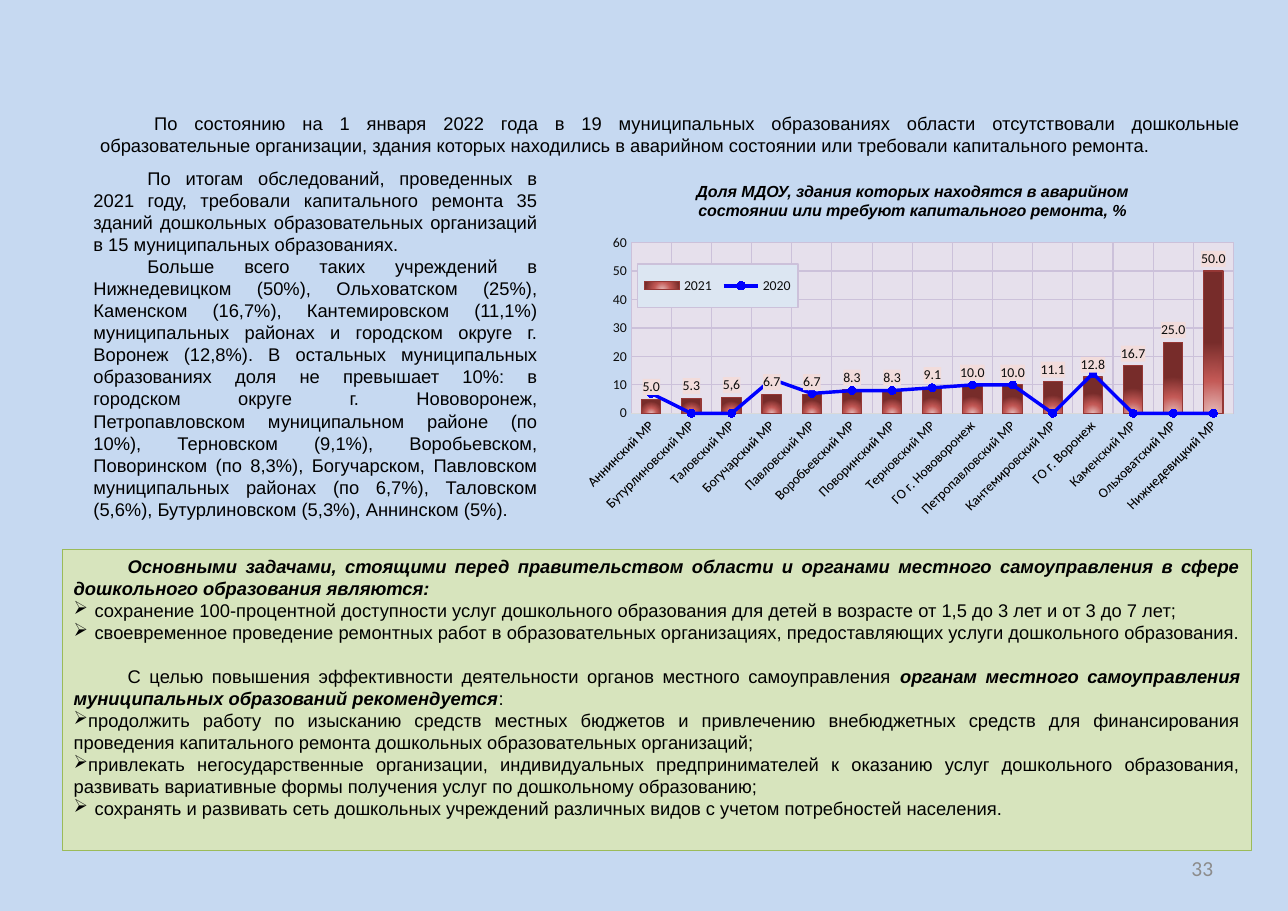
from pptx import Presentation
from pptx.chart.data import CategoryChartData
from pptx.dml.color import RGBColor
from pptx.enum.chart import XL_CHART_TYPE, XL_LABEL_POSITION, XL_LEGEND_POSITION, XL_MARKER_STYLE, XL_TICK_MARK
from pptx.enum.shapes import MSO_SHAPE
from pptx.enum.text import MSO_ANCHOR, PP_ALIGN
from pptx.oxml import parse_xml
from pptx.oxml.ns import nsdecls, qn
from pptx.util import Pt

SKY = RGBColor(0xC6, 0xD9, 0xF1)
BLACK = RGBColor(0, 0, 0)
INK = RGBColor(0x0D, 0x0D, 0x0D)
GREY = RGBColor(0x8C, 0x8C, 0x8C)
PALE_GREEN = RGBColor(0xD7, 0xE4, 0xBD)
GREEN = RGBColor(0x9B, 0xBB, 0x59)
LILAC = RGBColor(0xCC, 0xC1, 0xDA)
PALE_LILAC = RGBColor(0xE6, 0xE0, 0xEC)
PALE_BLUE = RGBColor(0xDC, 0xE6, 0xF2)
PINK = RGBColor(0xF2, 0xDC, 0xDB)
RED = RGBColor(0x95, 0x37, 0x35)
BLUE = RGBColor(0, 0, 0xFF)
AXIS = RGBColor(0xD9, 0xD9, 0xD9)

BODY = dict(size=Pt(12), name="Arial")
STRONG = dict(BODY, bold=True, italic=True)
HEADING = dict(STRONG, size=Pt(10.5))
NUMBER = dict(size=Pt(14), name="Calibri")
CHART = dict(size=Pt(9), name="Calibri", bold=False)
FIRST_LINE = (0, 35.28)
HANGING = (13.68, -13.68)
OUTDENT = (0, -13.68)


def set_font(font, style, color):
    for key, value in style.items():
        setattr(font, key, value)
    font.color.rgb = color


def write(sp, paragraphs, align=PP_ALIGN.JUSTIFY, color=BLACK):
    tf = sp.text_frame
    tf.word_wrap = True
    for i, (indent, runs) in enumerate(paragraphs):
        p = tf.paragraphs[0] if i == 0 else tf.add_paragraph()
        p.alignment = align
        pPr = p._p.get_or_add_pPr()
        pPr.set("marL", str(int(Pt(indent[0]))))
        pPr.set("indent", str(int(Pt(indent[1]))))
        if indent[1] < 0:
            pPr.append(parse_xml(f'<a:buChar {nsdecls("a")} char="➢"/>'))
        for text, style in runs:
            r = p.add_run()
            r.text = text
            set_font(r.font, style, color)
    return tf


prs = Presentation()
prs.slide_width, prs.slide_height = Pt(841.68), Pt(595.44)
s = prs.slides.add_slide(prs.slide_layouts[6])
s.background.fill.solid()
s.background.fill.fore_color.rgb = SKY

number = s.shapes.add_textbox(Pt(603.36), Pt(551.5), Pt(196.56), Pt(31.7))
tf = write(number, [((0, 0), [("33", NUMBER)])], PP_ALIGN.RIGHT, GREY)
tf.vertical_anchor = MSO_ANCHOR.MIDDLE

values = {
    "Аннинский МР": (5, 7),
    "Бутурлиновский МР": (5.3, 0),
    "Таловский МР": (5.6, 0),
    "Богучарский МР": (6.7, 12),
    "Павловский МР": (6.7, 7),
    "Воробьевский МР": (8.3, 8),
    "Поворинский МР": (8.3, 8),
    "Терновский МР": (9.1, 9),
    "ГО г. Нововоронеж": (10, 10),
    "Петропавловский МР": (10, 10),
    "Кантемировский МР": (11.1, 0),
    "ГО г. Воронеж": (12.8, 14),
    "Каменский МР": (16.7, 0),
    "Ольховатский МР": (25, 0),
    "Нижнедевицкий МР": (50, 0),
}
data = CategoryChartData()
data.categories = list(values)
for name, column in zip(("2021", "2020"), zip(*values.values())):
    data.add_series(name, column)
chart = s.shapes.add_chart(XL_CHART_TYPE.COLUMN_CLUSTERED, Pt(336.24), Pt(153.36),
                           Pt(482.4), Pt(187.92), data).chart
chart.has_title = False
set_font(chart.font, dict(CHART, size=Pt(10)), BLACK)

bars = chart.plots[0]
bars.gap_width = 108
bars.vary_by_categories = False
bar_xml = bars._element
line_xml = parse_xml(f'<c:lineChart {nsdecls("c")}><c:grouping val="standard"/>'
                     '<c:varyColors val="0"/><c:marker val="1"/></c:lineChart>')
ser = bar_xml.findall(qn("c:ser"))[1]
for flag in ser.findall(qn("c:invertIfNegative")):
    ser.remove(flag)
line_xml.insert(2, ser)
for ax in bar_xml.findall(qn("c:axId")):
    line_xml.append(parse_xml(f'<c:axId {nsdecls("c")} val="{ax.get("val")}"/>'))
bar_xml.addnext(line_xml)

for axis in (chart.category_axis, chart.value_axis):
    axis.major_tick_mark = axis.minor_tick_mark = XL_TICK_MARK.NONE
    axis.has_major_gridlines = True
    axis.major_gridlines.format.line.color.rgb = LILAC
    axis.major_gridlines.format.line.width = Pt(0.75)
    set_font(axis.tick_labels.font, CHART, INK)
cat, val = chart.category_axis, chart.value_axis
cat.format.line.color.rgb = AXIS
cat.format.line.width = Pt(0.75)
cat._element.find(qn("c:txPr")).find(qn("a:bodyPr")).set("rot", "-2700000")
val.format.line.fill.background()
val.minimum_scale, val.maximum_scale, val.major_unit = 0, 60, 10
val.tick_labels.number_format = "0"
val.tick_labels.number_format_is_linked = False

share = bars.series[0]
share.format.fill.solid()
share.format.line.color.rgb = RED
share.format.line.width = Pt(0.75)
spPr = share._element.find(qn("c:spPr"))
stops = "".join(f'<a:gs pos="{pos}000"><a:srgbClr val="{rgb}"/></a:gs>'
                for pos, rgb in ((0, "E6B9B8"), (46, "C35956"), (100, "772C2A")))
spPr.replace(spPr.find(qn("a:solidFill")), parse_xml(
    f'<a:gradFill {nsdecls("a")}><a:gsLst>{stops}</a:gsLst><a:path path="circle">'
    '<a:fillToRect l="50000" t="130000" r="50000" b="-30000"/></a:path></a:gradFill>'))

labels = share.data_labels
labels.show_value = True
labels.number_format = "#,##0.0"
labels.number_format_is_linked = False
labels.position = XL_LABEL_POSITION.OUTSIDE_END
set_font(labels.font, CHART, INK)
comma = share.points[2].data_label
comma.position = XL_LABEL_POSITION.OUTSIDE_END
r = comma.text_frame.paragraphs[0].add_run()
r.text = "5,6"
set_font(r.font, CHART, INK)

previous = chart.plots[1].series[0]
previous.smooth = False
previous.format.line.color.rgb = BLUE
previous.format.line.width = Pt(2.25)
previous.marker.style = XL_MARKER_STYLE.CIRCLE
previous.marker.size = 5
previous.marker.format.fill.solid()
previous.marker.format.fill.fore_color.rgb = BLUE
previous.marker.format.line.color.rgb = BLUE

chart.has_legend = True
legend = chart.legend
legend.position = XL_LEGEND_POSITION.BOTTOM
legend.include_in_layout = True
set_font(legend.font, CHART, INK)

plot_area = bar_xml.getparent()
for old in plot_area.findall(qn("c:layout")) + legend._element.findall(qn("c:layout")):
    old.getparent().remove(old)
for parent, index, target, box in (
        (plot_area, 0, '<c:layoutTarget val="inner"/>', (0.158, 0.02, 0.816, 0.599)),
        (legend._element, 1, "", (0.167, 0.095, 0.217, 0.153))):
    modes = '<c:xMode val="edge"/><c:yMode val="edge"/>'
    sizes = "".join(f'<c:{k} val="{v}"/>' for k, v in zip("xywh", box))
    parent.insert(index, parse_xml(f'<c:layout {nsdecls("c")}><c:manualLayout>{target}{modes}{sizes}'
                                   '</c:manualLayout></c:layout>'))

dLbls = labels._element
for before, fill, line in (
        (plot_area[-1], PALE_LILAC, LILAC),
        (legend._element.find(qn("c:overlay")), PALE_BLUE, LILAC),
        (dLbls.find(qn("c:numFmt")), PINK, None),
        (dLbls.find(qn("c:dLbl")).find(qn("c:tx")), PINK, None)):
    edge = f'<a:solidFill><a:srgbClr val="{line}"/></a:solidFill>' if line else "<a:noFill/>"
    before.addnext(parse_xml(f'<c:spPr {nsdecls("c", "a")}><a:solidFill><a:srgbClr val="{fill}"/></a:solidFill>'
                             f'<a:ln w="9525">{edge}</a:ln></c:spPr>'))

findings = s.shapes.add_textbox(Pt(54), Pt(105.84), Pt(304.56), Pt(254.16))
write(findings, [(FIRST_LINE, [(text, BODY)]) for text in (
    "По итогам обследований, проведенных в 2021 году, требовали капитального ремонта 35 зданий дошкольных образовательных организаций в 15 муниципальных образованиях.",
    "Больше всего таких учреждений в Нижнедевицком (50%), Ольховатском (25%), Каменском (16,7%), Кантемировском (11,1%) муниципальных районах и городском округе г. Воронеж (12,8%). В остальных муниципальных образованиях доля не превышает 10%: в городском округе г. Нововоронеж, Петропавловском муниципальном районе (по 10%), Терновском (9,1%), Воробьевском, Поворинском (по 8,3%), Богучарском, Павловском муниципальных районах (по 6,7%), Таловском (5,6%), Бутурлиновском (5,3%), Аннинском (5%).")])

tasks = s.shapes.add_shape(MSO_SHAPE.RECTANGLE, Pt(41.04), Pt(359.28), Pt(776.88), Pt(196.56))
tasks.shadow.inherit = False
tasks.fill.solid()
tasks.fill.fore_color.rgb = PALE_GREEN
tasks.line.color.rgb = GREEN
tasks.line.width = Pt(0.75)
tf = write(tasks, [
    (FIRST_LINE, [("Основными задачами, стоящими перед правительством области и органами местного самоуправления в сфере дошкольного образования являются:", STRONG)]),
    (HANGING, [("сохранение 100-процентной доступности услуг дошкольного образования для детей в возрасте от 1,5 до 3 лет и от 3 до 7 лет;", BODY)]),
    (HANGING, [("своевременное проведение ремонтных работ в образовательных организациях, предоставляющих услуги дошкольного образования.", BODY)]),
    (FIRST_LINE, [("С целью повышения эффективности деятельности органов местного самоуправления ", BODY),
                  ("органам местного самоуправления муниципальных образований рекомендуется", STRONG), (":", BODY)]),
    (OUTDENT, [("продолжить работу по изысканию средств местных бюджетов и привлечению внебюджетных средств для финансирования проведения капитального ремонта дошкольных образовательных организаций;", BODY)]),
    (OUTDENT, [("привлекать негосударственные организации, индивидуальных предпринимателей к оказанию услуг дошкольного образования, развивать вариативные формы получения услуг по дошкольному образованию;", BODY)]),
    (HANGING, [("сохранять и развивать сеть дошкольных учреждений различных видов с учетом потребностей населения.", BODY)]),
])
tf.vertical_anchor = MSO_ANCHOR.TOP
tf.paragraphs[3].space_before = Pt(14.4)

heading = s.shapes.add_textbox(Pt(429.12), Pt(115.2), Pt(334.8), Pt(32.4))
write(heading, [((0, 0), [("Доля МДОУ, здания которых находятся в аварийном состоянии или требуют капитального ремонта, %", HEADING)])], PP_ALIGN.CENTER)

intro = s.shapes.add_textbox(Pt(58.32), Pt(69.84), Pt(759.6), Pt(36))
write(intro, [(FIRST_LINE, [("По состоянию на 1 января 2022 года в 19 муниципальных образованиях области отсутствовали дошкольные образовательные организации, здания которых находились в аварийном состоянии или требовали капитального ремонта.", BODY)])])

prs.save("out.pptx")
